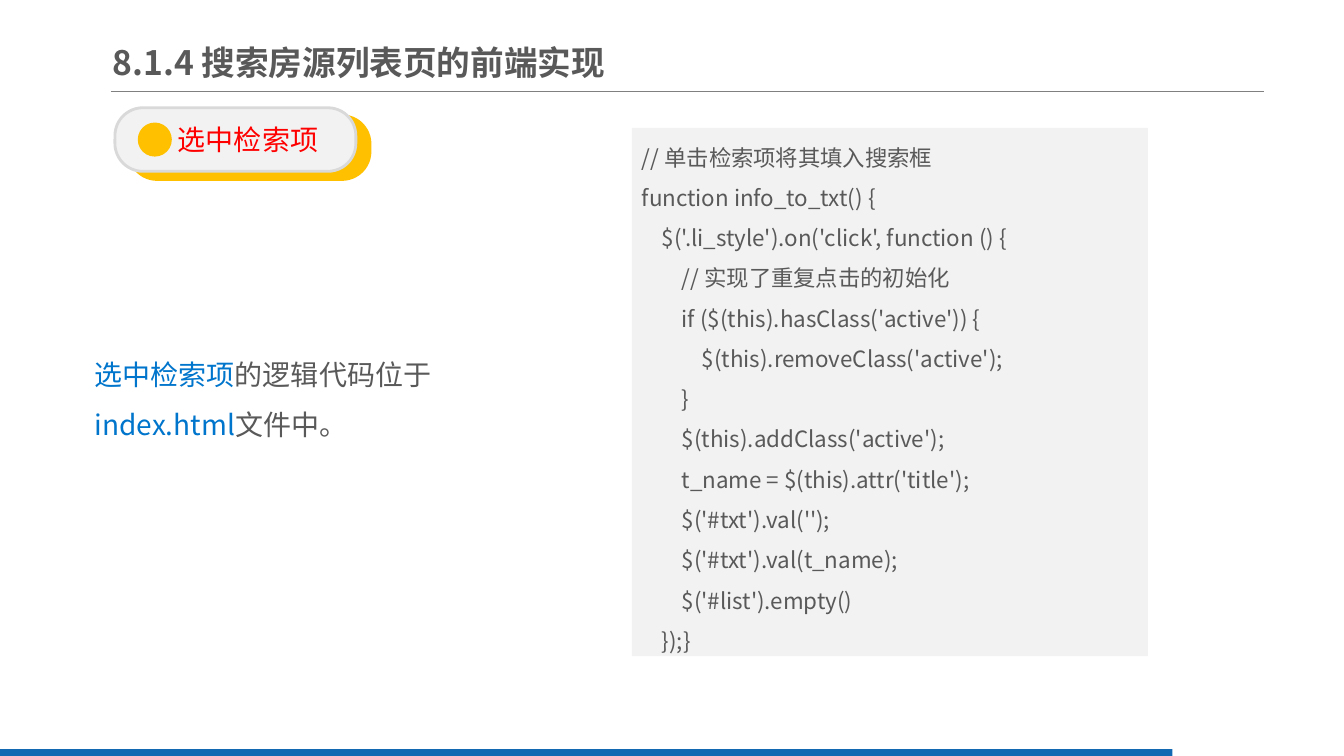
from lxml.etree import SubElement
from pptx import Presentation
from pptx.dml.color import RGBColor
from pptx.enum.shapes import MSO_CONNECTOR as Connector, MSO_SHAPE as Preset
from pptx.enum.text import MSO_ANCHOR as Anchor, PP_ALIGN as Align
from pptx.oxml.ns import qn
from pptx.util import Pt

FONT = "Noto Sans CJK SC"
COLORS = {
    "text": "595959",
    "red": "FF0000",
    "link": "0075CC",
    "bar": "1369B2",
    "gold": "FFC000",
    "panel": "F2F2F2",
    "edge": "D9D9D9",
    "rule": "808080",
}
CODE = """// 单击检索项将其填入搜索框
function info_to_txt() {
    $('.li_style').on('click', function () {
        // 实现了重复点击的初始化
        if ($(this).hasClass('active')) {
            $(this).removeClass('active');
        }
        $(this).addClass('active');
        t_name = $(this).attr('title');
        $('#txt').val('');
        $('#txt').val(t_name);
        $('#list').empty()
    });}"""


def rgb(name):
    return RGBColor.from_string(COLORS[name])


def points(box):
    return [Pt(length) for length in box]


def set_frame(shape, **frame_format):
    frame = shape.text_frame
    for name, value in {"word_wrap": True, **frame_format}.items():
        setattr(frame, name, value)
    return frame


def add_run(paragraph, text, color, size, bold=False):
    run = paragraph.add_run()
    run.text = text
    for name, value in {"name": FONT, "size": Pt(size), "bold": bold}.items():
        setattr(run.font, name, value)
    run.font.color.rgb = rgb(color)
    SubElement(run.font._element, qn("a:ea"), typeface=FONT)


def add_filled(slide, preset, box, fill, line=None):
    shape = slide.shapes.add_shape(preset, *points(box))
    shape.shadow.inherit = False
    shape.fill.solid()
    shape.fill.fore_color.rgb = rgb(fill)
    if line:
        shape.line.color.rgb = rgb(line)
        shape.line.width = Pt(2)
    else:
        shape.line.fill.background()
    return shape


def add_title(slide, box, rule_width):
    left, top, width, height = box
    title = slide.shapes.add_textbox(*points(box))
    frame = set_frame(title, vertical_anchor=Anchor.MIDDLE, margin_left=0, margin_right=0)
    add_run(frame.paragraphs[0], "8.1.4 搜索房源列表页的前端实现", "text", 24, True)
    rule_left, rule_top = left - 1.4, top + height + 1.4
    rule = slide.shapes.add_connector(
        Connector.STRAIGHT, *points((rule_left, rule_top, rule_left + rule_width, rule_top))
    )
    rule.line.color.rgb = rgb("rule")
    rule.line.width = Pt(0.75)
    SubElement(rule._element.spPr, qn("a:effectLst"))


def add_badge(slide, box):
    left, top, width, height = box
    back = add_filled(
        slide, Preset.ROUNDED_RECTANGLE, (left + 10.1, top + 5.8, width, height), "gold", "gold"
    )
    front = add_filled(slide, Preset.ROUNDED_RECTANGLE, box, "panel", "edge")
    for pill in (back, front):
        pill.adjustments[0] = 0.44
    frame = set_frame(front, vertical_anchor=Anchor.MIDDLE, margin_left=Pt(25.2))
    paragraph = frame.paragraphs[0]
    paragraph.alignment = Align.CENTER
    add_run(paragraph, "选中检索项", "red", 20)
    dot = 22.3
    add_filled(
        slide, Preset.OVAL, (left + 17.3, top + (height - dot) / 2, dot, dot), "gold", "gold"
    )


def add_note(slide, box):
    frame = set_frame(slide.shapes.add_textbox(*points(box)))
    paragraph = frame.paragraphs[0]
    paragraph.line_spacing = 1.5
    for text, color in (
        ("选中检索项", "link"),
        ("的逻辑代码位于", "text"),
        ("index.html", "link"),
        ("文件中。", "text"),
    ):
        add_run(paragraph, text, color, 20)


def add_code(slide, box):
    panel = add_filled(slide, Preset.RECTANGLE, box, "panel")
    frame = set_frame(panel, vertical_anchor=Anchor.MIDDLE)
    for index, line in enumerate(CODE.splitlines()):
        paragraph = frame.add_paragraph() if index else frame.paragraphs[0]
        paragraph.alignment = Align.LEFT
        paragraph.line_spacing = 1.5
        add_run(paragraph, line, "text", 16)


def main():
    presentation = Presentation()
    presentation.slide_width, presentation.slide_height = Pt(960), Pt(540)
    slide = presentation.slides.add_slide(presentation.slide_layouts[6])
    add_filled(slide, Preset.RECTANGLE, (0, 535, 837.4, 6.5), "bar")
    add_title(slide, (80.6, 24.5, 382.3, 39.6), 823.7)
    add_badge(slide, (82.1, 77, 172.1, 45.4))
    add_note(slide, (60.5, 239.8, 308.2, 79.9))
    add_code(slide, (451.4, 91.4, 368.6, 377.3))
    presentation.save("out.pptx")


if __name__ == "__main__":
    main()
